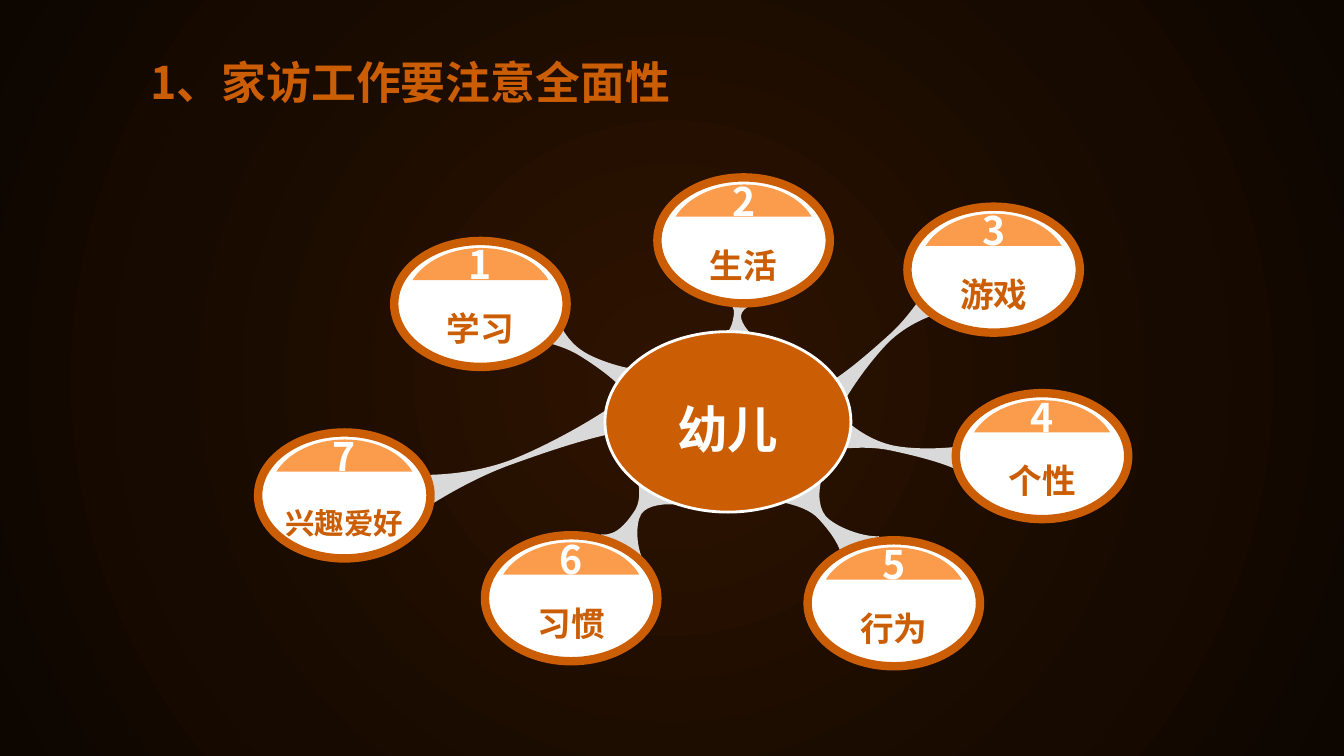
from dataclasses import dataclass

from lxml import etree
from pptx import Presentation
from pptx.dml.color import RGBColor
from pptx.enum.shapes import MSO_SHAPE
from pptx.enum.text import MSO_ANCHOR, MSO_AUTO_SIZE, PP_ALIGN
from pptx.oxml import parse_xml
from pptx.oxml.ns import nsdecls, qn
from pptx.util import Inches, Pt

OVAL = MSO_SHAPE.OVAL
LEFT, CENTER = PP_ALIGN.LEFT, PP_ALIGN.CENTER
MIDDLE, BOTTOM = MSO_ANCHOR.MIDDLE, MSO_ANCHOR.BOTTOM
NO_FIT = MSO_AUTO_SIZE.NONE

FONT = "Noto Sans CJK SC"
RUST, AMBER, WHITE, GRAY = "CB5E04", "FB9C4D", "FFFFFF", "D9D9D9"
GLOW = [(0, "2E1300"), (67, "170A00"), (100, "0C0500")]
WIDE, HIGH = 1.71, 1.25

Curve = list[tuple[float, float]]


@dataclass
class Arm:
    out: Curve
    back: Curve


@dataclass
class Topic:
    mark: str
    name: str
    left: float
    top: float
    size: int = 24
    space: float = 1.2


ARMS = [
    Arm([(8.17, 4.67), (8.12, 4.83), (8.1, 5.01), (8.19, 5.12), (8.29, 5.23), (8.56, 5.33), (8.72, 5.32)],
        [(8.34, 5.64), (8.4, 5.48), (8.23, 5.27), (8.13, 5.16), (8.04, 5.05), (7.87, 5.01), (7.79, 4.99)]),
    Arm([(4.06, 4.71), (4.33, 4.72), (4.69, 4.7), (5.05, 4.57), (5.4, 4.44), (6, 4.11), (6.21, 3.92)],
        [(6.33, 4.28), (6.08, 4.25), (5.4, 4.49), (5.04, 4.62), (4.69, 4.75), (4.36, 4.95), (4.19, 5.06)]),
    Arm([(5.49, 3.06), (5.54, 3.22), (5.63, 3.39), (5.79, 3.49), (5.95, 3.59), (6.29, 3.69), (6.45, 3.67)],
        [(6.25, 3.99), (6.21, 3.83), (5.91, 3.63), (5.75, 3.53), (5.59, 3.43), (5.39, 3.39), (5.29, 3.37)]),
    Arm([(7.65, 2.96), (7.5, 2.99), (7.36, 3.05), (7.35, 3.13), (7.34, 3.21), (7.47, 3.36), (7.6, 3.43)],
        [(7.09, 3.37), (7.25, 3.34), (7.27, 3.19), (7.28, 3.11), (7.29, 3.04), (7.2, 2.95), (7.15, 2.9)]),
    Arm([(9.49, 3.06), (9.29, 3.1), (9.04, 3.19), (8.84, 3.37), (8.65, 3.55), (8.36, 3.95), (8.3, 4.14)],
        [(8.05, 3.87), (8.24, 3.84), (8.62, 3.5), (8.82, 3.32), (9.02, 3.14), (9.16, 2.91), (9.24, 2.79)]),
    Arm([(8.32, 4.1), (8.44, 4.23), (8.63, 4.37), (8.86, 4.42), (9.1, 4.47), (9.53, 4.45), (9.7, 4.39)],
        [(9.63, 4.75), (9.51, 4.62), (9.07, 4.52), (8.84, 4.47), (8.61, 4.42), (8.37, 4.45), (8.24, 4.46)]),
    Arm([(6.75, 5.01), (6.59, 4.99), (6.42, 5.01), (6.36, 5.1), (6.3, 5.2), (6.31, 5.44), (6.39, 5.58)],
        [(5.96, 5.3), (6.12, 5.33), (6.24, 5.15), (6.3, 5.06), (6.36, 4.96), (6.34, 4.81), (6.32, 4.74)]),
]
CAP = Arm([(0.86, 0.07), (1.16, 0.07), (1.42, 0.2), (1.53, 0.39)],
          [(0.18, 0.39), (0.3, 0.2), (0.56, 0.07), (0.86, 0.07)])
TOPICS = [
    Topic("1", "学习", 3.91, 2.39),
    Topic("2", "生活", 6.52, 1.76),
    Topic("3", "游戏", 9, 2.05),
    Topic("4", "个性", 9.48, 3.9),
    Topic("5", "行为", 8.01, 5.36),
    Topic("6", "习惯", 4.81, 5.31),
    Topic("7", "兴趣爱好", 2.56, 4.29, 21, 1),
]


def color(code: str) -> RGBColor:
    return RGBColor.from_string(code)


def write(shape, text: str, size: int, code: str, anchor=MIDDLE,
          align=CENTER, space: float = 1, inset=(0, 0, 0, 0)) -> None:
    frame = shape.text_frame
    frame.text = text
    frame.word_wrap = True
    frame.auto_size = NO_FIT
    frame.vertical_anchor = anchor
    (frame.margin_left, frame.margin_top,
     frame.margin_right, frame.margin_bottom) = map(Inches, inset)
    para = frame.paragraphs[0]
    para.alignment = align
    para.line_spacing = space
    font = para.font
    font.name, font.size, font.bold = FONT, Pt(size), True
    font.color.rgb = color(code)
    props = para._p.pPr.find(qn("a:defRPr"))
    latin = props.find(qn("a:latin"))
    east = etree.Element(qn("a:ea"), typeface=FONT)
    latin.addnext(east)


def bend(shape, count: int) -> None:
    lines = list(shape._element.iter(qn("a:lnTo")))
    for half in (lines[:count], lines[count + 1:]):
        for i in range(0, count, 3):
            curve = etree.Element(qn("a:cubicBezTo"))
            half[i].addprevious(curve)
            for line in half[i:i + 3]:
                curve.append(line[0])
                line.getparent().remove(line)


def outline(slide, arm: Arm, code: str, left: float = 0, top: float = 0):
    first, *rest = [(Inches(left + x), Inches(top + y)) for x, y in arm.out + arm.back]
    form = slide.shapes.build_freeform(*first)
    form.add_line_segments(rest, close=True)
    shape = form.convert_to_shape()
    bend(shape, len(arm.out) - 1)
    shape.shadow.inherit = False
    shape.fill.solid()
    shape.fill.fore_color.rgb = color(code)
    shape.line.fill.background()
    return shape


def oval(slide, left: float, top: float, wide: float, high: float,
         fill: str, edge: str, weight: int):
    shape = slide.shapes.add_shape(OVAL, *map(Inches, (left, top, wide, high)))
    shape.shadow.inherit = False
    shape.fill.solid()
    shape.fill.fore_color.rgb = color(fill)
    shape.line.color.rgb = color(edge)
    shape.line.width = Pt(weight)
    return shape


def bubble(slide, topic: Topic) -> None:
    ring = oval(slide, topic.left, topic.top, WIDE, HIGH, WHITE, RUST, 6)
    write(ring, topic.name, topic.size, RUST, BOTTOM,
          space=topic.space, inset=(0, 0.24, 0, 0))
    cap = outline(slide, CAP, AMBER, topic.left, topic.top)
    write(cap, topic.mark, 28, WHITE)


def backdrop(slide) -> None:
    slide.background.fill.gradient()
    stops = "".join(f'<a:gs pos="{at * 1000}"><a:srgbClr val="{code}"/></a:gs>'
                    for at, code in GLOW)
    glow = parse_xml(
        f'<a:gradFill {nsdecls("a")} rotWithShape="1"><a:gsLst>{stops}</a:gsLst>'
        '<a:path path="circle"><a:fillToRect l="50000" t="50000" r="50000" b="50000"/>'
        '</a:path></a:gradFill>')
    old = next(slide._element.iter(qn("a:gradFill")))
    old.getparent().replace(old, glow)


def main() -> None:
    deck = Presentation()
    deck.slide_width, deck.slide_height = Inches(13.33), Inches(7.5)
    slide = deck.slides.add_slide(deck.slide_layouts[5])
    backdrop(slide)
    title = slide.shapes.title
    title.left, title.top, title.width, title.height = map(Inches, (1.39, 0.5, 8.16, 0.61))
    write(title, "1、家访工作要注意全面性", 32, RUST, align=LEFT,
          inset=(0.1, 0.05, 0.1, 0.05))
    for arm in ARMS:
        outline(slide, arm, GRAY)
    for topic in TOPICS:
        bubble(slide, topic)
    hub = oval(slide, 6, 3.29, 2.44, 1.79, RUST, WHITE, 2)
    write(hub, "幼儿", 36, WHITE, space=1.2)
    deck.save("out.pptx")


if __name__ == "__main__":
    main()
